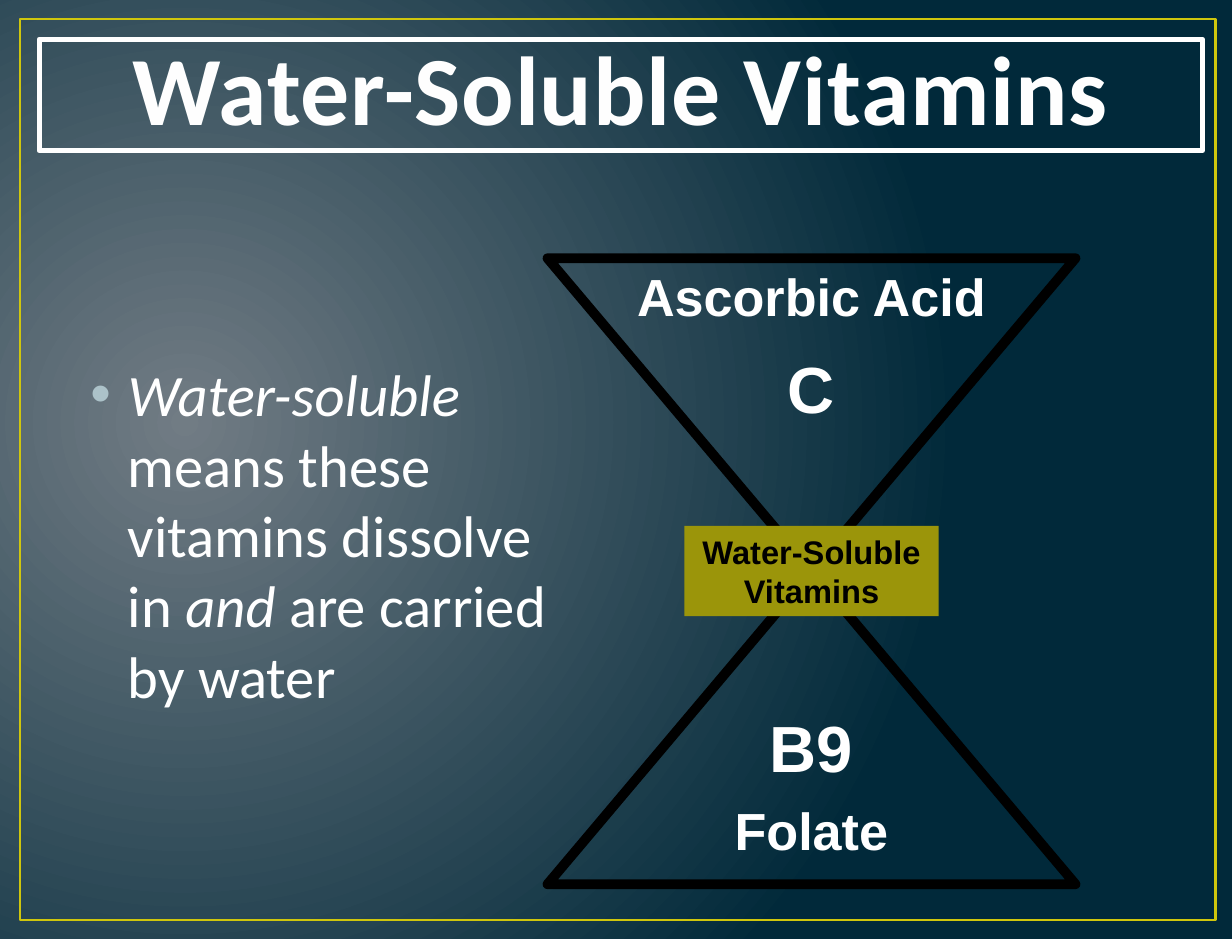
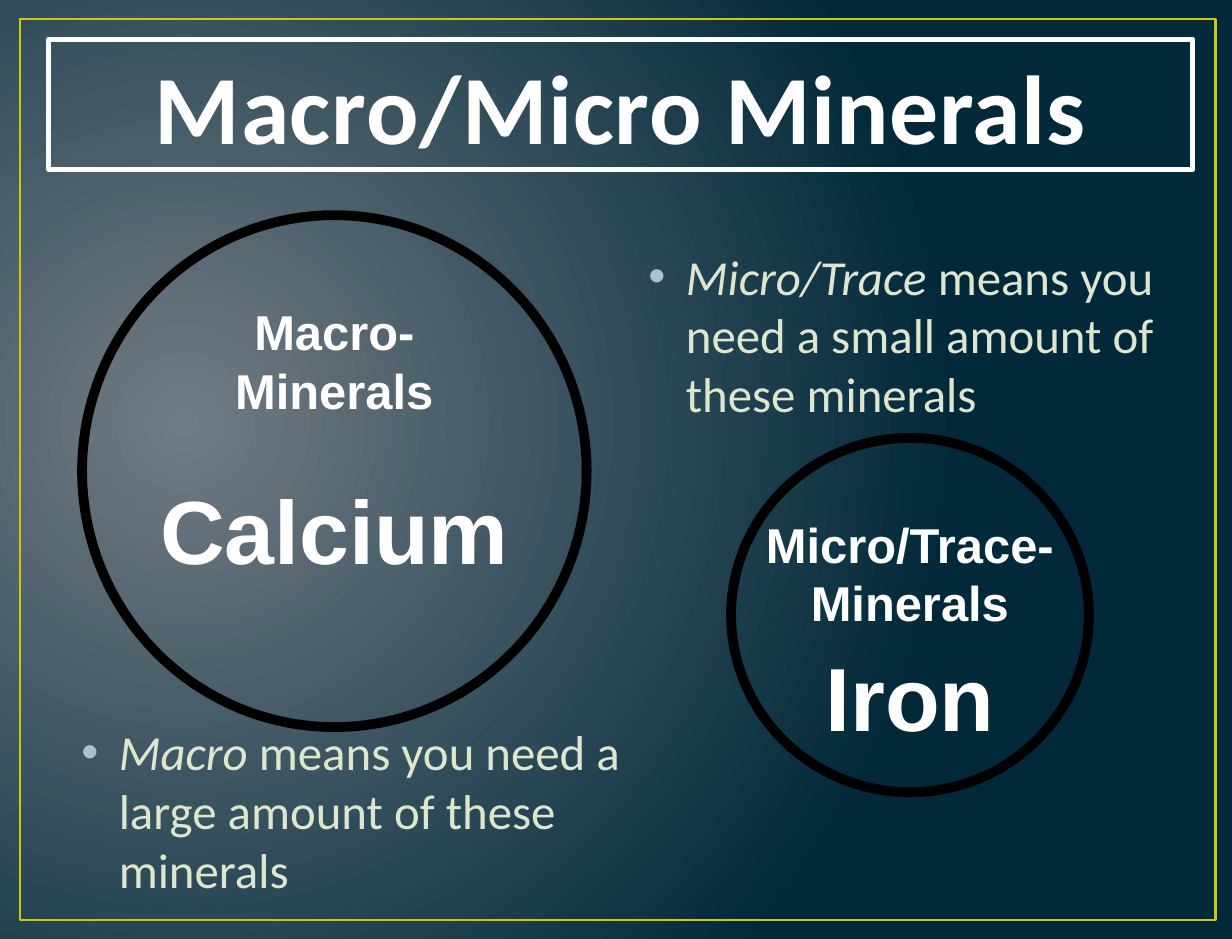
from lxml.etree import SubElement
from pptx import Presentation
from pptx.dml.color import RGBColor
from pptx.enum.shapes import MSO_SHAPE as Preset
from pptx.enum.text import MSO_ANCHOR as Anchor, MSO_AUTO_SIZE as AutoSize, PP_ALIGN as Align
from pptx.oxml.ns import qn
from pptx.util import Pt

WHITE, CREAM, BLACK = "FFFFFF", "DFE6D0", "000000"
rgb = RGBColor.from_string


def outline(slide, preset, box, color=None, width=0, fill=None):
    """Add a preset shape; without a fill or line colour that part stays empty."""
    shape = slide.shapes.add_shape(preset, *map(Pt, box))
    shape.shadow.inherit = False
    if fill:
        shape.fill.solid()
        shape.fill.fore_color.rgb = rgb(fill)
    else:
        shape.fill.background()
    if color:
        shape.line.color.rgb = rgb(color)
        shape.line.width = Pt(width)
    else:
        shape.line.fill.background()
    return shape


def write(frame, runs, size, color, font="Arial", bold=True, align=Align.CENTER):
    """Fill the frame's first paragraph with (text, italic) runs and return it."""
    frame.word_wrap = True
    paragraph = frame.paragraphs[0]
    paragraph.alignment = align
    for text, italic in runs:
        run = paragraph.add_run()
        run.text = text
        run.font.name = font
        run.font.size = Pt(size)
        run.font.bold = bold
        run.font.italic = italic
        run.font.color.rgb = rgb(color)
    return paragraph


prs = Presentation()
prs.slide_width, prs.slide_height = Pt(756), Pt(576)

# Shared background: a glow left of centre
master = prs.slide_master
glow = master.background.fill
glow.gradient()
for stop, color in zip(glow.gradient_stops, ("717C84", "01293A")):
    stop.color.rgb = rgb(color)
gradient = master.element.find(".//" + qn("a:gradFill"))
gradient.remove(gradient.find(qn("a:lin")))
circle_path = SubElement(gradient, qn("a:path"), path="circle")
SubElement(circle_path, qn("a:fillToRect"), l="15000", t="50000", r="85000", b="60000")

# Labels: text, centre x, top, width, height, size
vitamin_x, macro_x, micro_x = 498, 205.2, 558.4
slides = [
    {
        "title": ("Water-Soluble Vitamins", (24, 24, 714, 68.4)),
        "bullets": [
            ((47.5, 216, 300, 234), 36, WHITE,
             [("Water-soluble", True), (" means these vitamins dissolve in ", False),
              ("and", True), (" are carried by water", False)]),
        ],
        "labels": [
            ("C", vitamin_x, 210, 66, 55.4, 40),
            ("B9", vitamin_x, 430.5, 66, 55.4, 40),
            ("Folate", vitamin_x, 486, 138, 46, 32),
            ("Ascorbic Acid", vitamin_x, 158.4, 300, 46, 32),
        ],
        "figures": [(Preset.FLOWCHART_COLLATE, vitamin_x, 158.4, 324, 384)],
    },
    {
        "title": ("Macro/Micro Minerals", (30, 24, 702, 80)),
        "bullets": [
            ((42, 439.2, 366, 154.8), 30, CREAM,
             [("Macro", True), (" means you need a large amount of these minerals", False)]),
            ((390, 147.6, 360, 162), 30, CREAM,
             [("Micro/Trace", True), (" means you need a small amount of these minerals", False)]),
        ],
        "labels": [
            ("Calcium", macro_x, 288, 300, 74, 55),
            ("Macro-Minerals", macro_x, 181.4, 192, 80, 30),
            ("Iron", micro_x, 390, 186, 74, 55),
            ("Micro/Trace-Minerals", micro_x, 312, 192, 80, 30),
        ],
        "figures": [
            (Preset.OVAL, macro_x, 132, 309.6, 314),
            (Preset.OVAL, micro_x, 268.6, 219.6, 217.4),
        ],
    },
]

for content in slides:
    slide = prs.slides.add_slide(prs.slide_layouts[6])
    outline(slide, Preset.RECTANGLE, (12.2, 11.5, 733.7, 553), "CFC60D", 1.5)

    title, title_box = content["title"]
    frame = outline(slide, Preset.RECTANGLE, title_box, WHITE, 3).text_frame
    frame.vertical_anchor = Anchor.BOTTOM
    heading = write(frame, [(title, False)], 60, "FEFEFE", "Calibri")
    letters = heading.runs[0].font._element
    letters.set("spc", "50")
    edge = SubElement(letters, qn("a:ln"), w="13335")
    SubElement(SubElement(edge, qn("a:solidFill")), qn("a:srgbClr"), val="384F55")
    letters.insert(0, edge)

    for box, size, color, runs in content["bullets"]:
        frame = slide.shapes.add_textbox(*map(Pt, box)).text_frame
        frame.margin_left = frame.margin_right = Pt(7.9)
        bullet = write(frame, runs, size, color, "Calibri", False, Align.LEFT)
        bullet.space_before = Pt(size * 0.2)
        layout = bullet._p.get_or_add_pPr()
        layout.set("marL", str(Pt(23)))
        layout.set("indent", str(-Pt(23)))
        SubElement(SubElement(layout, qn("a:buClr")), qn("a:srgbClr"), val="ACC2C9")
        SubElement(layout, qn("a:buFont"), typeface="Arial")
        SubElement(layout, qn("a:buChar"), char="•")

    for text, center, top, width, height, size in content["labels"]:
        box = (center - width / 2, top, width, height)
        frame = slide.shapes.add_textbox(*map(Pt, box)).text_frame
        write(frame, [(text, False)], size, WHITE)
        frame.auto_size = AutoSize.SHAPE_TO_FIT_TEXT

    for preset, center, top, width, height in content["figures"]:
        outline(slide, preset, (center - width / 2, top, width, height), BLACK, 6)

# Name band over the waist of the hourglass
waist = outline(prs.slides[0], Preset.RECTANGLE, (vitamin_x - 78, 322.6, 156, 55.4), fill="9B950A")
write(waist.text_frame, [("Water-Soluble Vitamins", False)], 20, BLACK)
waist.text_frame.auto_size = AutoSize.SHAPE_TO_FIT_TEXT

prs.save("out.pptx")
